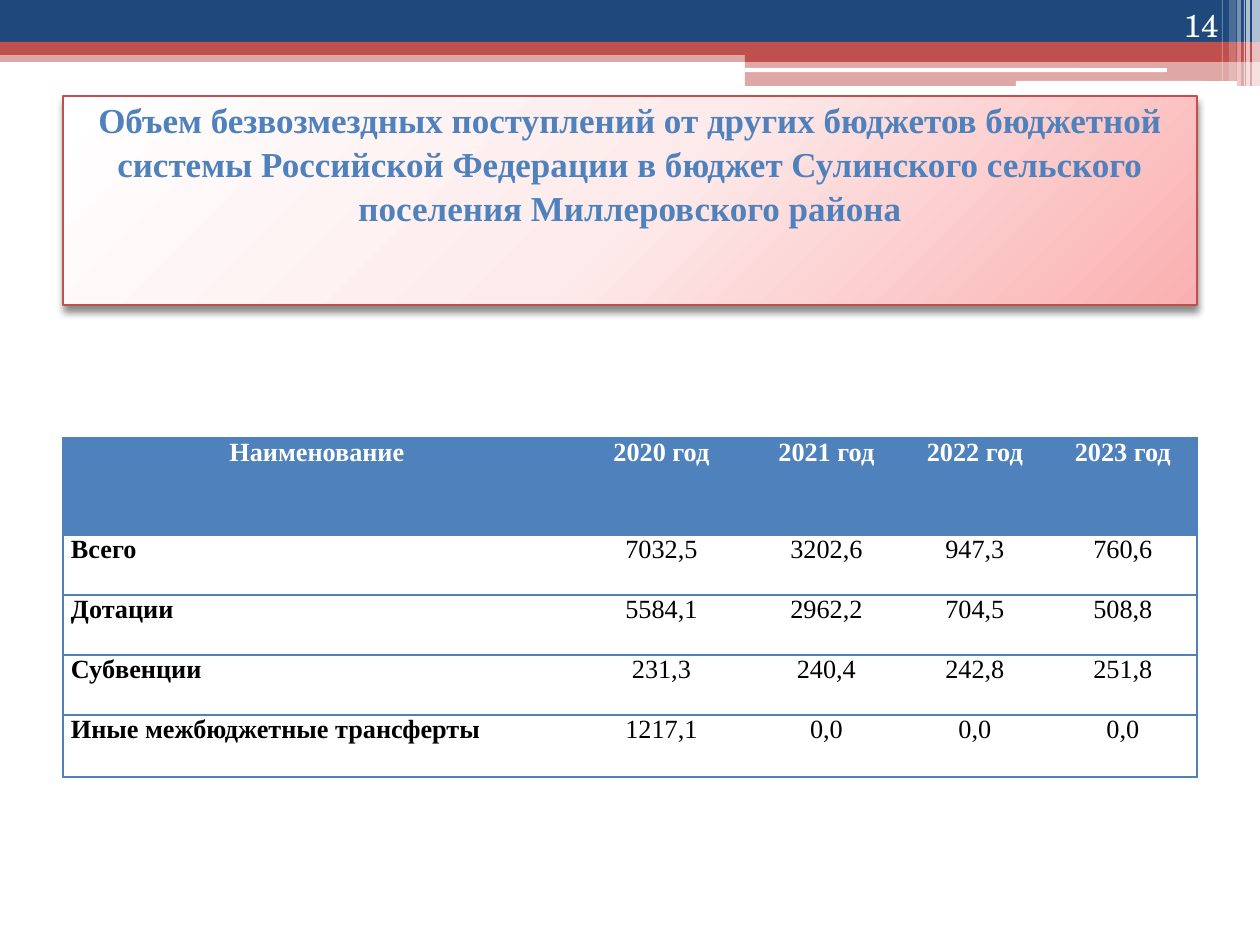
from lxml.etree import SubElement
from pptx import Presentation
from pptx.dml.color import RGBColor
from pptx.enum.shapes import MSO_SHAPE
from pptx.enum.text import MSO_ANCHOR, MSO_AUTO_SIZE, PP_ALIGN
from pptx.oxml import parse_xml
from pptx.oxml.ns import nsdecls, qn
from pptx.util import Pt

THEME = {
    "navy": "1F497D", "red": "C0504D", "blue": "4F81BD",
    "white": "FFFFFF", "black": "000000",
    "fade": [(0, "FFFFFF"), (50000, "FDEBEB"), (100000, "FAB0B0")],
    "font": "Times New Roman", "page_font": "TeX Gyre Schola",
    "title": 20, "cell": 15, "page": 18,
}
PX = 914400 / 126


def px(n):
    return round(n * PX)


def style(par, size, color, bold=False, align=PP_ALIGN.CENTER, face=THEME["font"]):
    par.alignment = align
    font = par.font
    font.name, font.size, font.bold = face, Pt(size), bold
    font.color.rgb = RGBColor.from_string(THEME[color])


deck = Presentation()
deck.slide_width, deck.slide_height = px(1260), px(945)
slide = deck.slides.add_slide(deck.slide_layouts[5])

# Header bands and the white stripes at the right: x, y, w, h, colour, opacity %
RECT, ROUND = MSO_SHAPE.RECTANGLE, MSO_SHAPE.ROUNDED_RECTANGLE
bands = [
    (RECT, 0, 50, 1260, 12, "red", 50),
    (RECT, 0, 0, 1260, 43, "navy", 100),
    (RECT, 0, 42, 1260, 13, "red", 100),
    (RECT, 745, 49, 515, 13, "red", 100),
    (RECT, 745, 61, 515, 25, "red", 50),
    (ROUND, 745, 68, 422, 4, "white", 100),
    (ROUND, 1016, 81, 221, 5, "white", 100),
]
stripes = [(1252, 8, 86, 65), (1246, 4, 86, 65), (1244, 1, 86, 60),
           (1237, 4, 86, 40), (1229, 7, 81, 20), (1222, 1, 81, 30)]
bands += [(RECT, x, 0, w, h, "white", clear) for x, w, h, clear in stripes]
for kind, x, y, w, h, color, clear in bands:
    band = slide.shapes.add_shape(kind, px(x), px(y), px(w), px(h))
    band.shadow.inherit = False
    band.line.fill.background()
    band.fill.solid()
    band.fill.fore_color.rgb = RGBColor.from_string(THEME[color])
    if clear < 100:
        tint = band.fill._xPr.find(".//" + qn("a:srgbClr"))
        SubElement(tint, qn("a:alpha"), val=str(clear * 1000))

# Title on a shaded panel
title = slide.shapes.title
title.left, title.top, title.width, title.height = px(63), px(96), px(1134), px(209)
stops = "".join(f'<a:gs pos="{pos}"><a:srgbClr val="{color}"/></a:gs>'
                for pos, color in THEME["fade"])
props = title._element.spPr
props.append(parse_xml(f'<a:gradFill {nsdecls("a")} rotWithShape="1"><a:gsLst>{stops}'
                       '</a:gsLst><a:lin ang="2700000" scaled="0"/></a:gradFill>'))
title.line.color.rgb = RGBColor.from_string(THEME["red"])
title.line.width = Pt(1)
props.append(parse_xml(
    f'<a:effectLst {nsdecls("a")}><a:outerShdw blurRad="50800" dist="38100" '
    'dir="5400000" rotWithShape="0"><a:srgbClr val="000000"><a:alpha val="45000"/>'
    '</a:srgbClr></a:outerShdw></a:effectLst>'))
frame = title.text_frame
frame.word_wrap = True
frame.auto_size = MSO_AUTO_SIZE.NONE
frame.vertical_anchor = MSO_ANCHOR.TOP
frame.margin_top = frame.margin_bottom = 0
frame.text = ("Объем безвозмездных поступлений от других бюджетов бюджетной "
              "системы Российской Федерации в бюджет Сулинского сельского "
              "поселения Миллеровского района")
style(frame.paragraphs[0], THEME["title"], "blue", True)
frame.paragraphs[0].line_spacing = 1.05

# Table of transfers by year
rows = [
    ("Наименование", "2020 год", "2021 год", "2022 год", "2023 год"),
    ("Всего", "7032,5", "3202,6", "947,3", "760,6"),
    ("Дотации", "5584,1", "2962,2", "704,5", "508,8"),
    ("Субвенции", "231,3", "240,4", "242,8", "251,8"),
    ("Иные межбюджетные трансферты", "1217,1", "0,0", "0,0", "0,0"),
]
widths = [508, 181, 149, 148, 148]
heights = [97, 60, 60, 60, 62]
table = slide.shapes.add_table(len(rows), len(widths), px(63), px(438),
                               px(sum(widths)), px(sum(heights))).table
for col, w in zip(table.columns, widths):
    col.width = px(w)
for row, h in zip(table.rows, heights):
    row.height = px(h)
for r, row in enumerate(rows):
    for c, text in enumerate(row):
        cell = table.cell(r, c)
        cell.margin_left = cell.margin_right = px(8)
        cell.margin_top = cell.margin_bottom = 0
        edges = {"lnL": c == 0, "lnR": c == len(row) - 1, "lnT": True, "lnB": True}
        for edge, shown in edges.items():
            line = SubElement(cell._tc.get_or_add_tcPr(), qn("a:" + edge), w="12700")
            fill = SubElement(line, qn("a:solidFill" if shown else "a:noFill"))
            if shown:
                SubElement(fill, qn("a:srgbClr"), val=THEME["blue"])
        cell.fill.solid()
        cell.fill.fore_color.rgb = RGBColor.from_string(THEME["white" if r else "blue"])
        cell.text = text
        style(cell.text_frame.paragraphs[0], THEME["cell"], "black" if r else "white",
              r == 0 or c == 0, PP_ALIGN.LEFT if r and c == 0 else PP_ALIGN.CENTER)

# Page number
page = slide.shapes.add_textbox(px(1126), 0, px(105), px(50)).text_frame
page.word_wrap = True
page.vertical_anchor = MSO_ANCHOR.BOTTOM
page.text = "14"
style(page.paragraphs[0], THEME["page"], "white", align=PP_ALIGN.RIGHT,
      face=THEME["page_font"])

deck.save("out.pptx")
